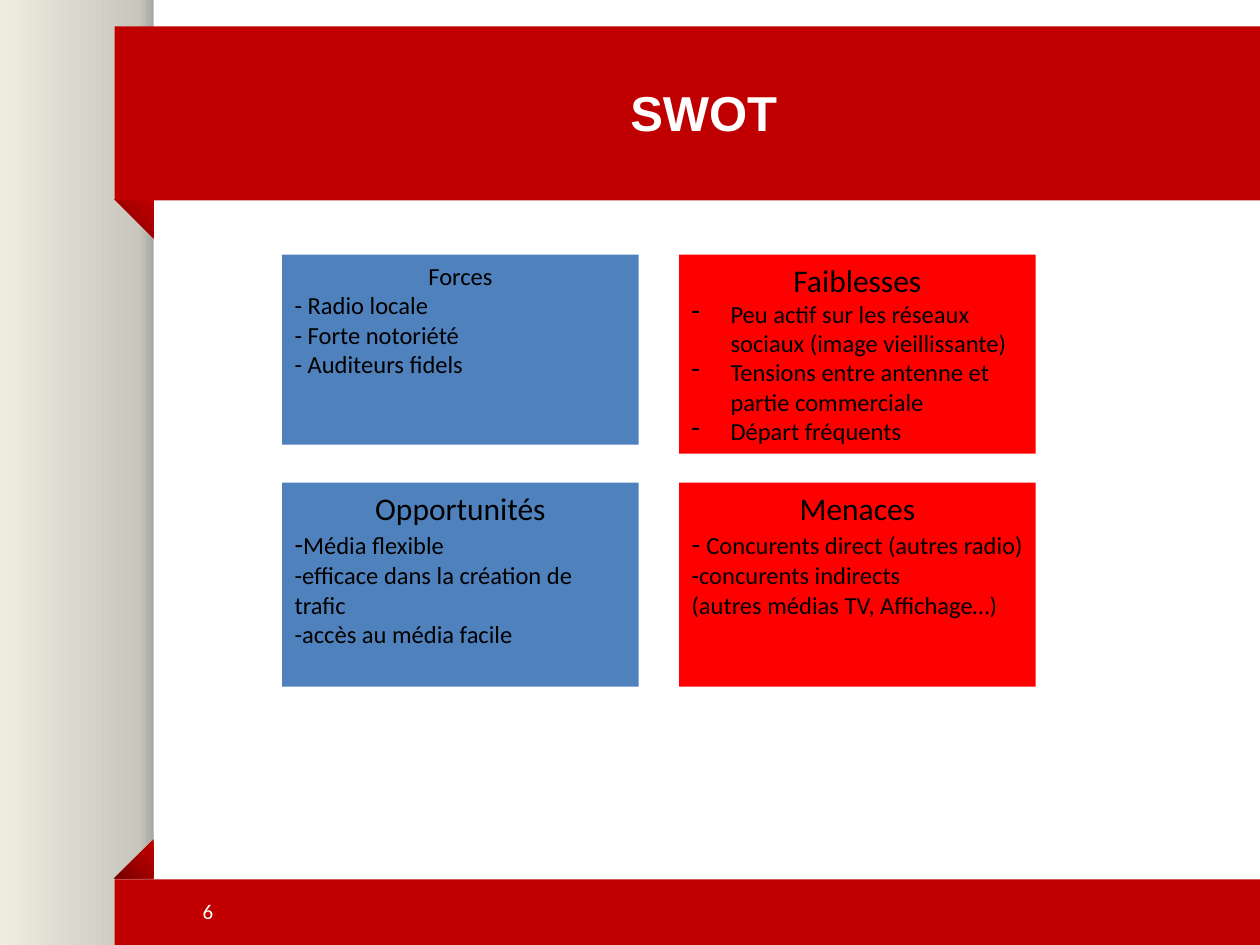
from dataclasses import dataclass

from lxml.etree import SubElement
from pptx import Presentation
from pptx.dml.color import RGBColor
from pptx.enum.shapes import MSO_SHAPE as Shape
from pptx.enum.text import MSO_ANCHOR as Anchor, PP_ALIGN as Align
from pptx.oxml import parse_xml
from pptx.oxml.ns import nsdecls, qn
from pptx.util import Inches, Pt


@dataclass(frozen=True)
class Theme:
    band: str = "C00000"
    positive: str = "4F81BD"
    negative: str = "FF0000"
    ink: str = "000000"
    light: str = "FFFFFF"
    spine: tuple = ((0, "A6A6A6"), (10, "C9C7BD"), (100, "EFEDE0"))
    fold: tuple = ((0, "720000"), (50, "A20000"), (100, "C00000"))
    title_font: str = "Arial"
    body_font: str = "Calibri"
    title_size: int = 28
    heading_size: int = 18
    mark_size: int = 16
    body_size: int = 14
    number_size: int = 12


THEME = Theme()
WIDTH, HEIGHT = 10, 7.5
SPINE_WIDTH, BAND_LEFT = 1.22, 0.91
FOLD = SPINE_WIDTH - BAND_LEFT
HEADER_TOP, HEADER_HEIGHT = 0.21, 1.38
FOOTER_TOP = 6.98
# The quadrant grid: two columns, two rows
GRID_LEFT, GRID_TOP = 2.24, 2.02
COLUMN_STEP, ROW_STEP, QUADRANT_WIDTH = 3.15, 1.81, 2.83
HANGING = 0.31

LINEAR = '<a:lin ang="10800000" scaled="0"/>'
CORNER = '<a:path path="circle"><a:fillToRect t="100000" r="100000"/></a:path>'

# column, row, height, colour, heading, heading size, first mark, bulleted, lines
QUADRANTS = [
    (0, 0, 1.51, THEME.positive, "Forces", THEME.body_size, "", False,
     ["- Radio locale", "- Forte notoriété", "- Auditeurs fidels"]),
    (0, 1, 1.62, THEME.positive, "Opportunités", THEME.heading_size, "-", False,
     ["Média flexible", "-efficace dans la création de trafic",
      "-accès au média facile"]),
    (1, 0, 1.58, THEME.negative, "Faiblesses", THEME.heading_size, "", True,
     ["Peu actif sur les réseaux sociaux (image vieillissante)",
      "Tensions entre antenne et partie commerciale", "Départ fréquents"]),
    (1, 1, 1.62, THEME.negative, "Menaces", THEME.heading_size, "- ", False,
     ["Concurents direct (autres radio)", "-concurents indirects",
      "(autres médias TV, Affichage…)"]),
]


def add_block(slide, box, colour=None, kind=Shape.RECTANGLE):
    block = slide.shapes.add_shape(kind, *map(Inches, box))
    block.shadow.inherit = False
    block.line.fill.background()
    if colour:
        block.fill.solid()
        block.fill.fore_color.rgb = RGBColor.from_string(colour)
    return block


def set_gradient(block, stops, direction):
    marks = "".join(f'<a:gs pos="{share * 1000}"><a:srgbClr val="{colour}"/></a:gs>'
                    for share, colour in stops)
    gradient = parse_xml(f'<a:gradFill {nsdecls("a")} rotWithShape="1">'
                         f'<a:gsLst>{marks}</a:gsLst>{direction}</a:gradFill>')
    block._element.spPr.find(qn("a:prstGeom")).addnext(gradient)


def add_run(paragraph, text, size, colour=THEME.ink, font=THEME.body_font, bold=False):
    run = paragraph.add_run()
    run.text = text
    style = {"size": Pt(size), "name": font, "bold": bold}
    for key, value in style.items():
        setattr(run.font, key, value)
    run.font.color.rgb = RGBColor.from_string(colour)


def set_dash_bullet(paragraph):
    properties = paragraph._p.get_or_add_pPr()
    properties.set("marL", str(Inches(HANGING)))
    properties.set("indent", str(-Inches(HANGING)))
    SubElement(properties, qn("a:buChar")).set("char", "-")


def draw_spine(slide, box):
    set_gradient(add_block(slide, box), THEME.spine, LINEAR)


def draw_band(slide, box, fold_top, fold_rotation):
    """A red band with its folded corner against the spine."""
    fold = add_block(slide, (box[0], fold_top, FOLD, FOLD), kind=Shape.RIGHT_TRIANGLE)
    fold._element.spPr.xfrm.set("flipH", "1")
    fold.rotation = fold_rotation
    set_gradient(fold, THEME.fold, CORNER)
    add_block(slide, box, THEME.band)


def place_title(slide, box):
    title = slide.shapes.title
    for side, length in zip(("left", "top", "width", "height"), box):
        setattr(title, side, Inches(length))
    title.text_frame.vertical_anchor = Anchor.MIDDLE
    paragraph = title.text_frame.paragraphs[0]
    paragraph.alignment = Align.CENTER
    add_run(paragraph, "SWOT", THEME.title_size, THEME.light, THEME.title_font, True)


def draw_page_number(slide, box):
    frame = slide.shapes.add_textbox(*map(Inches, box)).text_frame
    frame.word_wrap = True
    frame.vertical_anchor = Anchor.MIDDLE
    add_run(frame.paragraphs[0], "6", THEME.number_size, THEME.light)


def draw_quadrant(slide, box, colour, heading, heading_size, mark, bulleted, lines):
    frame = add_block(slide, box, colour).text_frame
    frame.word_wrap = True
    frame.vertical_anchor = Anchor.TOP
    frame.paragraphs[0].alignment = Align.CENTER
    add_run(frame.paragraphs[0], heading, heading_size)
    for index, line in enumerate(lines):
        paragraph = frame.add_paragraph()
        paragraph.alignment = Align.LEFT
        if bulleted:
            set_dash_bullet(paragraph)
        if mark and index == 0:
            add_run(paragraph, mark, THEME.mark_size)
        add_run(paragraph, line, THEME.body_size)


def main():
    deck = Presentation()
    deck.slide_width, deck.slide_height = Inches(WIDTH), Inches(HEIGHT)
    slide = deck.slides.add_slide(deck.slide_layouts[5])

    # Spine, header and footer
    band_width = WIDTH - BAND_LEFT
    draw_spine(slide, (0, 0, SPINE_WIDTH, HEIGHT))
    draw_band(slide, (BAND_LEFT, HEADER_TOP, band_width, HEADER_HEIGHT),
              HEADER_TOP + HEADER_HEIGHT - 0.01, 270)
    draw_band(slide, (BAND_LEFT, FOOTER_TOP, band_width, HEIGHT - FOOTER_TOP),
              FOOTER_TOP - FOLD - 0.01, 0)

    # Title goes in front of the header band
    slide.shapes._spTree.append(slide.shapes.title._element)
    place_title(slide, (1.53, 0.38, 8.11, 1.02))
    draw_page_number(slide, (1.51, 7.03, 2.33, 0.4))

    # Quadrants
    for column, row, height, *content in QUADRANTS:
        box = (GRID_LEFT + column * COLUMN_STEP, GRID_TOP + row * ROW_STEP,
               QUADRANT_WIDTH, height)
        draw_quadrant(slide, box, *content)

    deck.save("out.pptx")


if __name__ == "__main__":
    main()
